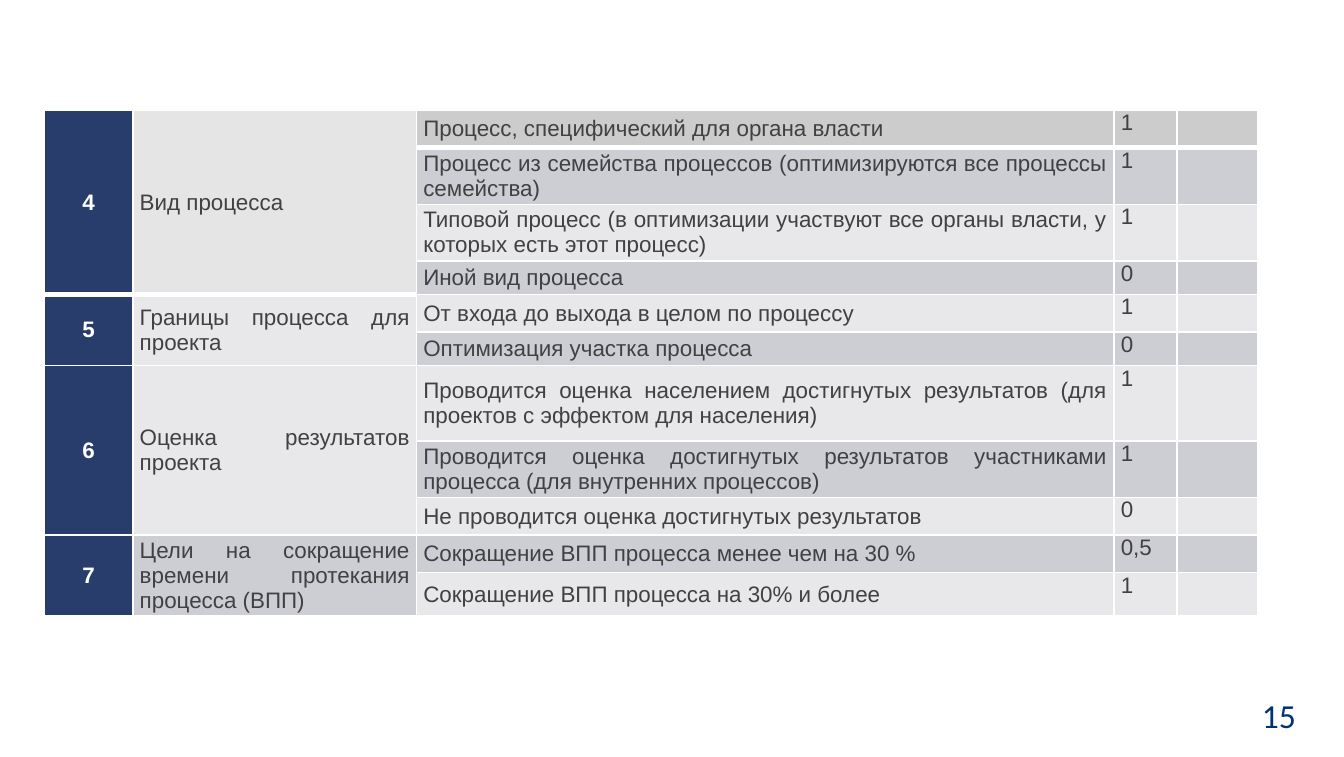
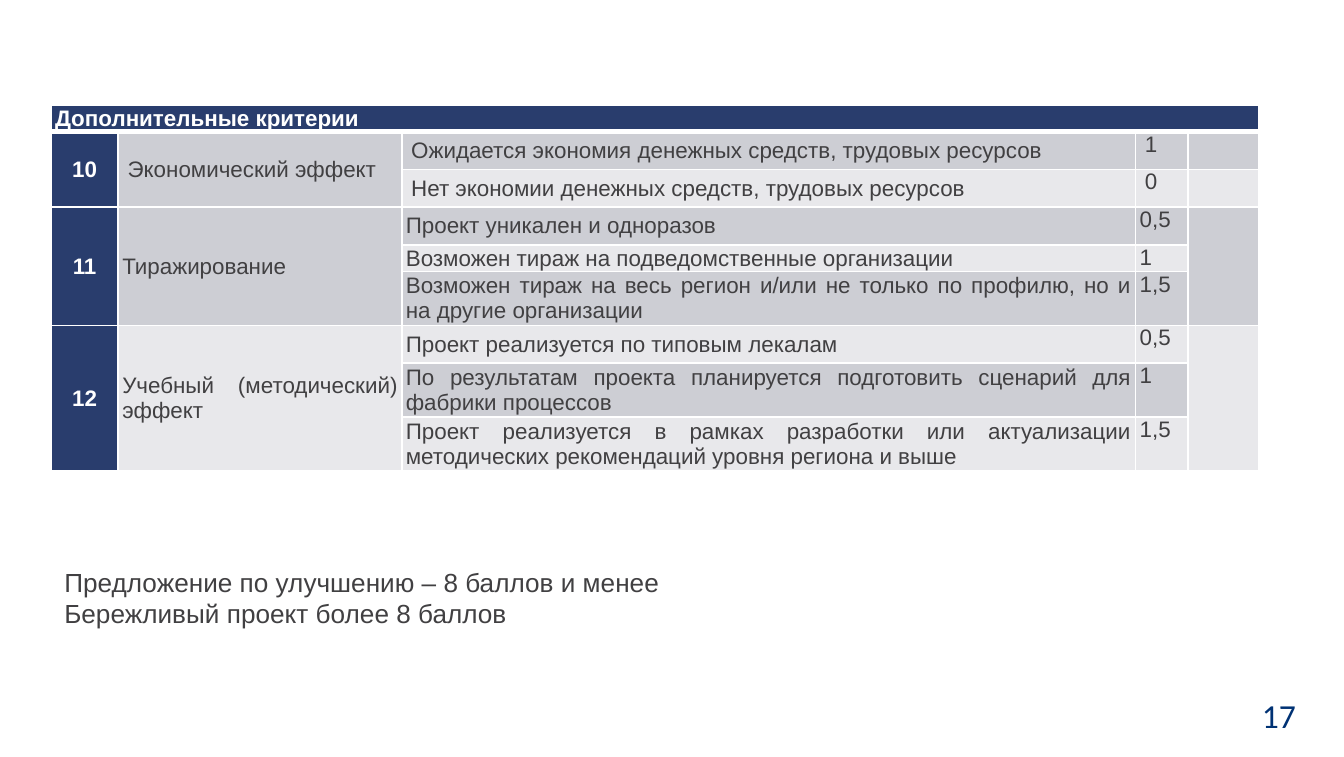
from dataclasses import dataclass

from lxml.etree import SubElement
from pptx import Presentation
from pptx.dml.color import RGBColor
from pptx.enum.text import MSO_ANCHOR as Anchor, PP_ALIGN as Align
from pptx.oxml.ns import qn
from pptx.slide import Slide
from pptx.table import Table, _Cell as Cell
from pptx.text.text import TextFrame, _Paragraph as Paragraph
from pptx.util import Inches, Pt

NAVY, INK, WHITE, PAGE_BLUE = "293D6D", "414042", "FFFFFF", "003274"
BANDS = ("E8E8EB", "CDCED4")
FIRST_ROW, FIRST_NAME = "CCCCCC", "E5E5E5"
TABLE_SIZE = 12


@dataclass(frozen=True)
class Criterion:
    number: str
    name: str
    options: list[tuple[str, str]]
    inset: float = 0.05
    shared_mark: bool = False


@dataclass(frozen=True)
class Sheet:
    page_number: str
    left: float
    top: float
    columns: list[float]
    rows: list[float]
    criteria: list[Criterion]
    heading: str = ""
    notes: tuple[str, ...] = ()


SHEETS = [
    Sheet(
        "15", 0.33, 0.82,
        [0.66, 2.11, 5.19, 0.47, 0.6],
        [0.28, 0.42, 0.42, 0.25, 0.28, 0.25, 0.56, 0.42, 0.28, 0.28, 0.28],
        [
            Criterion("4", "Вид процесса", [
                ("Процесс, специфический для органа власти", "1"),
                ("Процесс из семейства процессов (оптимизируются все процессы семейства)", "1"),
                ("Типовой процесс (в оптимизации участвуют все органы власти, "
                 "у которых есть этот процесс)", "1"),
                ("Иной вид процесса", "0"),
            ]),
            Criterion("5", "Границы процесса для проекта", [
                ("От входа до выхода в целом по процессу", "1"),
                ("Оптимизация участка процесса", "0"),
            ]),
            Criterion("6", "Оценка результатов проекта", [
                ("Проводится оценка населением достигнутых результатов "
                 "(для проектов с эффектом для населения)", "1"),
                ("Проводится оценка достигнутых результатов участниками процесса "
                 "(для внутренних процессов)", "1"),
                ("Не проводится оценка достигнутых результатов", "0"),
            ]),
            Criterion("7", "Цели на сокращение времени протекания процесса (ВПП)", [
                ("Сокращение ВПП процесса менее чем на 30 %", "0,5"),
                ("Сокращение ВПП процесса на 30% и более", "1"),
            ]),
        ],
    ),
    Sheet(
        "17", 0.38, 0.78,
        [0.5, 2.11, 5.46, 0.39, 0.53],
        [0.19, 0.28, 0.28, 0.28, 0.19, 0.37, 0.28, 0.37, 0.37],
        [
            Criterion("10", "Экономический эффект", [
                ("Ожидается экономия денежных средств, трудовых ресурсов", "1"),
                ("Нет экономии денежных средств, трудовых ресурсов", "0"),
            ], inset=0.07),
            Criterion("11", "Тиражирование", [
                ("Проект уникален и одноразов", "0,5"),
                ("Возможен тираж на подведомственные организации", "1"),
                ("Возможен тираж на весь регион и/или не только по профилю, "
                 "но и на другие организации", "1,5"),
            ], inset=0.03, shared_mark=True),
            Criterion("12", "Учебный (методический) эффект", [
                ("Проект реализуется по типовым лекалам", "0,5"),
                ("По результатам проекта планируется подготовить сценарий "
                 "для фабрики процессов", "1"),
                ("Проект реализуется в рамках разработки или актуализации "
                 "методических рекомендаций уровня региона и выше", "1,5"),
            ], inset=0.03, shared_mark=True),
        ],
        heading="Дополнительные критерии",
        notes=("Предложение по улучшению – 8 баллов и менее",
               "Бережливый проект более 8 баллов"),
    ),
]


def rgb(value: str) -> RGBColor:
    return RGBColor.from_string(value)


def add_span(para: Paragraph, text: str, size: float, color: str,
             font: str = "Arial", bold: bool = False) -> None:
    span = para.add_run()
    span.text = text
    span.font.name = font
    span.font.size = Pt(size)
    span.font.bold = bold
    span.font.color.rgb = rgb(color)


def add_text_box(page: Slide, left: float, top: float, width: float,
                 height: float) -> TextFrame:
    box = page.shapes.add_textbox(Inches(left), Inches(top), Inches(width), Inches(height))
    box.text_frame.word_wrap = True
    return box.text_frame


def prepare_cell(cell: Cell, is_first_row: bool) -> None:
    """Give a cell white rules, no vertical insets and a table-sized empty line."""
    cell.margin_top = cell.margin_bottom = 0
    cell.margin_left = cell.margin_right = Inches(0.05)
    widths = {"a:lnL": 1, "a:lnR": 1, "a:lnB": 3 if is_first_row else 1}
    if is_first_row:
        widths = {"a:lnL": 1, "a:lnR": 1, "a:lnT": 1, "a:lnB": 3}
    properties = cell._tc.get_or_add_tcPr()
    for side, width in widths.items():
        line = SubElement(properties, qn(side), w=str(Pt(width)))
        fill = SubElement(line, qn("a:solidFill"))
        SubElement(fill, qn("a:srgbClr"), val=WHITE)
    SubElement(cell.text_frame.paragraphs[0]._p, qn("a:endParaRPr"),
               sz=str(TABLE_SIZE * 100))


def fill_cell(cell: Cell, text: str, fill: str, inset: float,
              align: Align = Align.JUSTIFY, anchor: Anchor = Anchor.MIDDLE) -> None:
    """Fill a cell; navy cells carry bold white text."""
    is_header = fill == NAVY
    cell.fill.solid()
    cell.fill.fore_color.rgb = rgb(fill)
    cell.vertical_anchor = anchor
    cell.margin_left = cell.margin_right = Inches(inset)
    if text:
        para = cell.text_frame.paragraphs[0]
        para.alignment = align
        add_span(para, text, TABLE_SIZE, WHITE if is_header else INK, bold=is_header)


def add_criterion(table: Table, criterion: Criterion, start: int) -> int:
    """Write one criterion from row start and return the next free row."""
    end = start + len(criterion.options)
    inset = criterion.inset
    for column in (0, 1, 4) if criterion.shared_mark else (0, 1):
        table.cell(start, column).merge(table.cell(end - 1, column))
    name_fill = BANDS[start % 2] if start else FIRST_NAME
    fill_cell(table.cell(start, 0), criterion.number, NAVY, inset, Align.CENTER)
    fill_cell(table.cell(start, 1), criterion.name, name_fill, inset)
    for row, (option, score) in enumerate(criterion.options, start):
        fill = BANDS[row % 2] if row else FIRST_ROW
        fill_cell(table.cell(row, 2), option, fill, inset)
        fill_cell(table.cell(row, 3), score, fill, inset, anchor=Anchor.TOP)
        if not table.cell(row, 4).is_spanned:
            fill_cell(table.cell(row, 4), "", fill, inset, anchor=Anchor.TOP)
    return end


def add_criteria_table(page: Slide, sheet: Sheet) -> None:
    table = page.shapes.add_table(
        len(sheet.rows), len(sheet.columns), Inches(sheet.left), Inches(sheet.top),
        Inches(sum(sheet.columns)), Inches(sum(sheet.rows))).table
    for column, width in zip(table.columns, sheet.columns):
        column.width = Inches(width)
    for index, (row, height) in enumerate(zip(table.rows, sheet.rows)):
        row.height = Inches(height)
        for cell in row.cells:
            prepare_cell(cell, index == 0)
    start = 0
    if sheet.heading:
        heading = table.cell(0, 0)
        heading.merge(table.cell(0, len(sheet.columns) - 1))
        fill_cell(heading, sheet.heading, NAVY, 0.03, Align.LEFT)
        start = 1
    for criterion in sheet.criteria:
        start = add_criterion(table, criterion, start)


def add_notes(page: Slide, notes: tuple[str, ...]) -> None:
    frame = add_text_box(page, 0.38, 4.16, 5.18, 0.57)
    frame.vertical_anchor = Anchor.MIDDLE
    for index, note in enumerate(notes):
        para = frame.add_paragraph() if index else frame.paragraphs[0]
        para.alignment = Align.JUSTIFY
        add_span(para, note, 14, INK)


def add_sheet(deck: Presentation, sheet: Sheet) -> None:
    page = deck.slides.add_slide(deck.slide_layouts[6])
    number = add_text_box(page, 9.29, 5.12, 0.69, 0.41)
    add_span(number.paragraphs[0], sheet.page_number, 18, PAGE_BLUE, "Calibri")
    add_criteria_table(page, sheet)
    if sheet.notes:
        add_notes(page, sheet.notes)


def main() -> None:
    deck = Presentation()
    deck.slide_width, deck.slide_height = Inches(10), Inches(5.63)
    for sheet in SHEETS:
        add_sheet(deck, sheet)
    deck.save("out.pptx")


if __name__ == "__main__":
    main()
